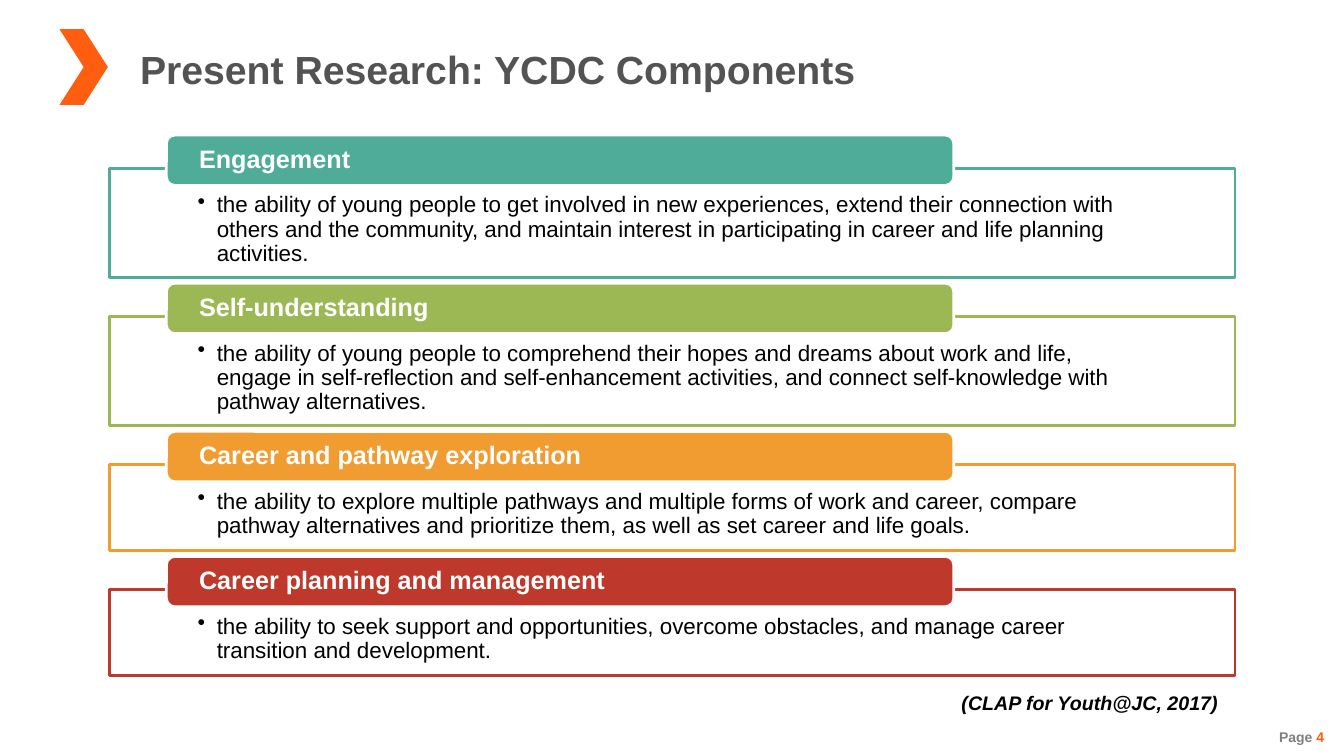
from dataclasses import dataclass

from lxml.etree import SubElement
from pptx import Presentation
from pptx.dml.color import RGBColor
from pptx.enum.shapes import MSO_SHAPE
from pptx.enum.text import MSO_ANCHOR, PP_ALIGN
from pptx.oxml.ns import qn
from pptx.util import Inches, Pt

# Content
TITLE = "Present Research: YCDC Components"
CITATION = "(CLAP for Youth@JC, 2017)"
PAGE_LABEL, PAGE_NUMBER = "Page ", "4"
# heading, description, colour, box height
COMPONENTS = [
    ("Engagement",
     "the ability of young people to get involved in new experiences, extend their "
     "connection with others and the community, and maintain interest in participating "
     "in career and life planning activities.", "4EAC98", 1.08),
    ("Self-understanding",
     "the ability of young people to comprehend their hopes and dreams about work and "
     "life, engage in self-reflection and self-enhancement activities, and connect "
     "self-knowledge with pathway alternatives.", "9BB855", 1.08),
    ("Career and pathway exploration",
     "the ability to explore multiple pathways and multiple forms of work and career, "
     "compare pathway alternatives and prioritize them, as well as set career and life "
     "goals.", "F19C31", 0.85),
    ("Career planning and management",
     "the ability to seek support and opportunities, overcome obstacles, and manage "
     "career transition and development.", "BE382B", 0.85),
]


@dataclass(frozen=True)
class Theme:
    font: str = "Arial"
    title: str = "535353"
    accent: str = "FF5E10"
    muted: str = "808080"
    text: str = "000000"
    white: str = "FFFFFF"
    title_size: int = 28
    heading_size: int = 18
    body_size: int = 16
    citation_size: int = 14
    page_size: int = 10


THEME = Theme()

# Layout in inches
BOX_LEFT, BOX_WIDTH, FIRST_BOX_TOP, BOX_GAP = 1.09, 11.16, 1.67, 0.39
TAB_LEFT, TAB_WIDTH, TAB_HEIGHT, TAB_RISE = 1.65, 7.81, 0.5, 0.33
BULLET_INDENT = 0.19

presentation = Presentation()
presentation.slide_width = Inches(13.33)
presentation.slide_height = Inches(7.5)
slide = presentation.slides.add_slide(presentation.slide_layouts[6])


def write_text(shape, runs, *, size, bold=False, italic=False, align=PP_ALIGN.LEFT,
               anchor=MSO_ANCHOR.TOP, margins=(0.1, 0.05, 0.1, 0.05), wrap=True,
               line_spacing=None, bullet=False):
    """Fill a shape with one paragraph made of (text, colour) runs."""
    frame = shape.text_frame
    frame.word_wrap = wrap
    frame.vertical_anchor = anchor
    (frame.margin_left, frame.margin_top,
     frame.margin_right, frame.margin_bottom) = map(Inches, margins)
    paragraph = frame.paragraphs[0]
    if bullet:
        properties = paragraph._p.get_or_add_pPr()
        properties.set("marL", str(Inches(BULLET_INDENT)))
        properties.set("indent", str(-Inches(BULLET_INDENT)))
        SubElement(properties, qn("a:buChar")).set("char", "•")
    paragraph.alignment = align
    if line_spacing:
        paragraph.line_spacing = line_spacing
    for text, color in runs:
        run = paragraph.add_run()
        run.text = text
        run.font.name = THEME.font
        run.font.size = Pt(size)
        run.font.bold = bold
        run.font.italic = italic
        run.font.color.rgb = RGBColor.from_string(color)


def add_label(left, top, width, height, runs, **text_format):
    label = slide.shapes.add_textbox(*map(Inches, (left, top, width, height)))
    write_text(label, runs, wrap=False, **text_format)


def add_block(kind, left, top, width, height, fill, line=None):
    block = slide.shapes.add_shape(kind, *map(Inches, (left, top, width, height)))
    block.shadow.inherit = False
    block.fill.solid()
    block.fill.fore_color.rgb = RGBColor.from_string(fill)
    if line:
        block.line.color.rgb = RGBColor.from_string(line)
        block.line.width = Pt(2)
    else:
        block.line.fill.background()
    return block


# Title with chevron
add_label(1.29, 0.4, 7.39, 0.57, [(TITLE, THEME.title)], size=THEME.title_size, bold=True)
add_block(MSO_SHAPE.CHEVRON, 0.59, 0.29, 0.48, 0.75, THEME.accent)

# Page number
add_label(12.58, 7.18, 0.65, 0.27,
          [(PAGE_LABEL, THEME.muted), (PAGE_NUMBER, THEME.accent)],
          size=THEME.page_size, bold=True, align=PP_ALIGN.RIGHT)

# Component boxes, each with a heading tab over its top edge
box_top = FIRST_BOX_TOP
for heading, description, color, box_height in COMPONENTS:
    box = add_block(MSO_SHAPE.RECTANGLE, BOX_LEFT, box_top, BOX_WIDTH, box_height,
                    THEME.white, color)
    write_text(box, [(description, THEME.text)], size=THEME.body_size,
               margins=(0.87, 0.25, 0.87, 0.12), line_spacing=0.9, bullet=True)
    tab = add_block(MSO_SHAPE.ROUNDED_RECTANGLE, TAB_LEFT, box_top - TAB_RISE,
                    TAB_WIDTH, TAB_HEIGHT, color, THEME.white)
    write_text(tab, [(heading, THEME.white)], size=THEME.heading_size, bold=True,
               anchor=MSO_ANCHOR.MIDDLE, margins=(0.3, 0, 0.3, 0), line_spacing=0.9)
    box_top += box_height + BOX_GAP

# Citation
add_label(9.42, 6.81, 2.76, 0.34, [(CITATION, THEME.text)], size=THEME.citation_size,
          bold=True, italic=True, align=PP_ALIGN.RIGHT)

presentation.save("out.pptx")
